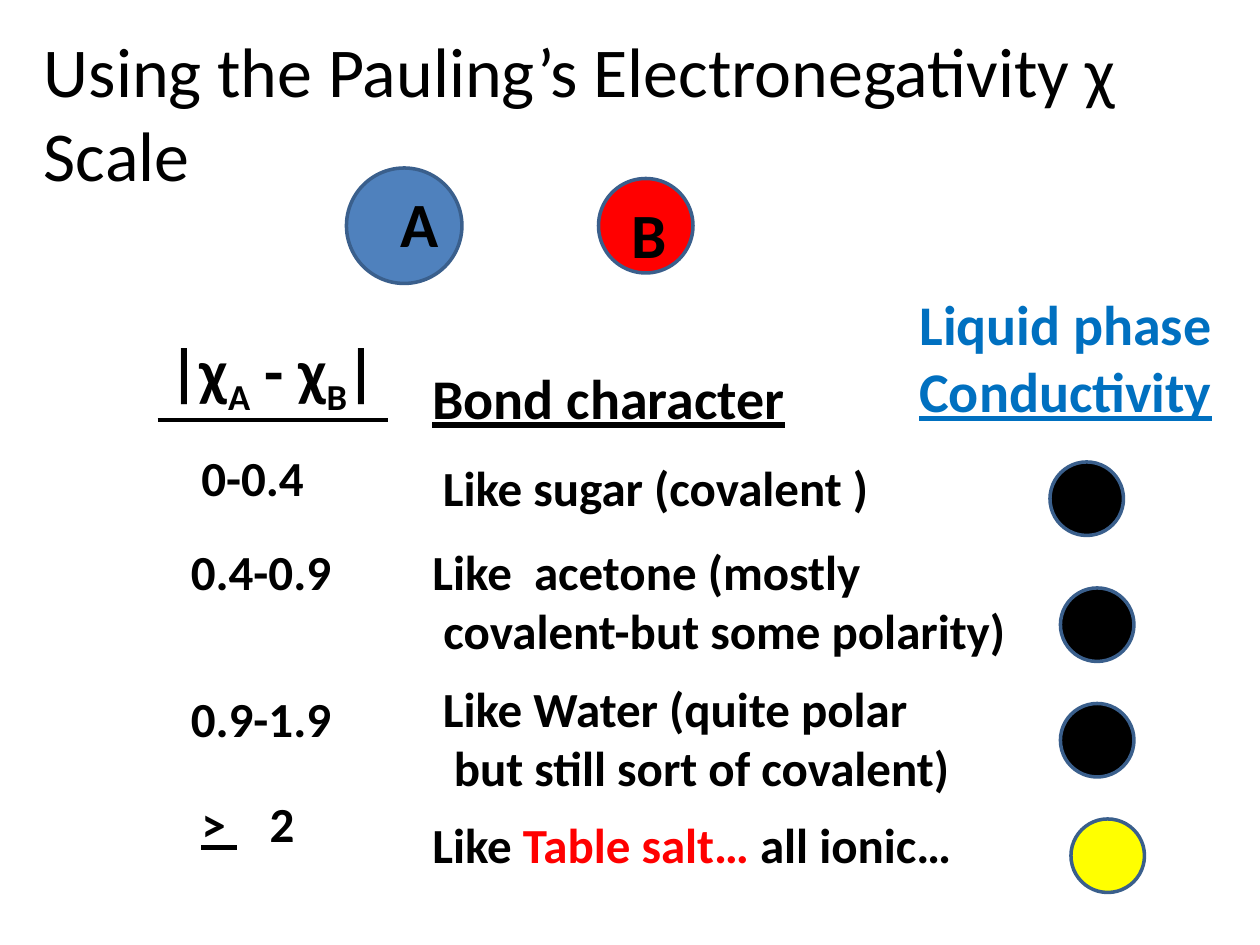
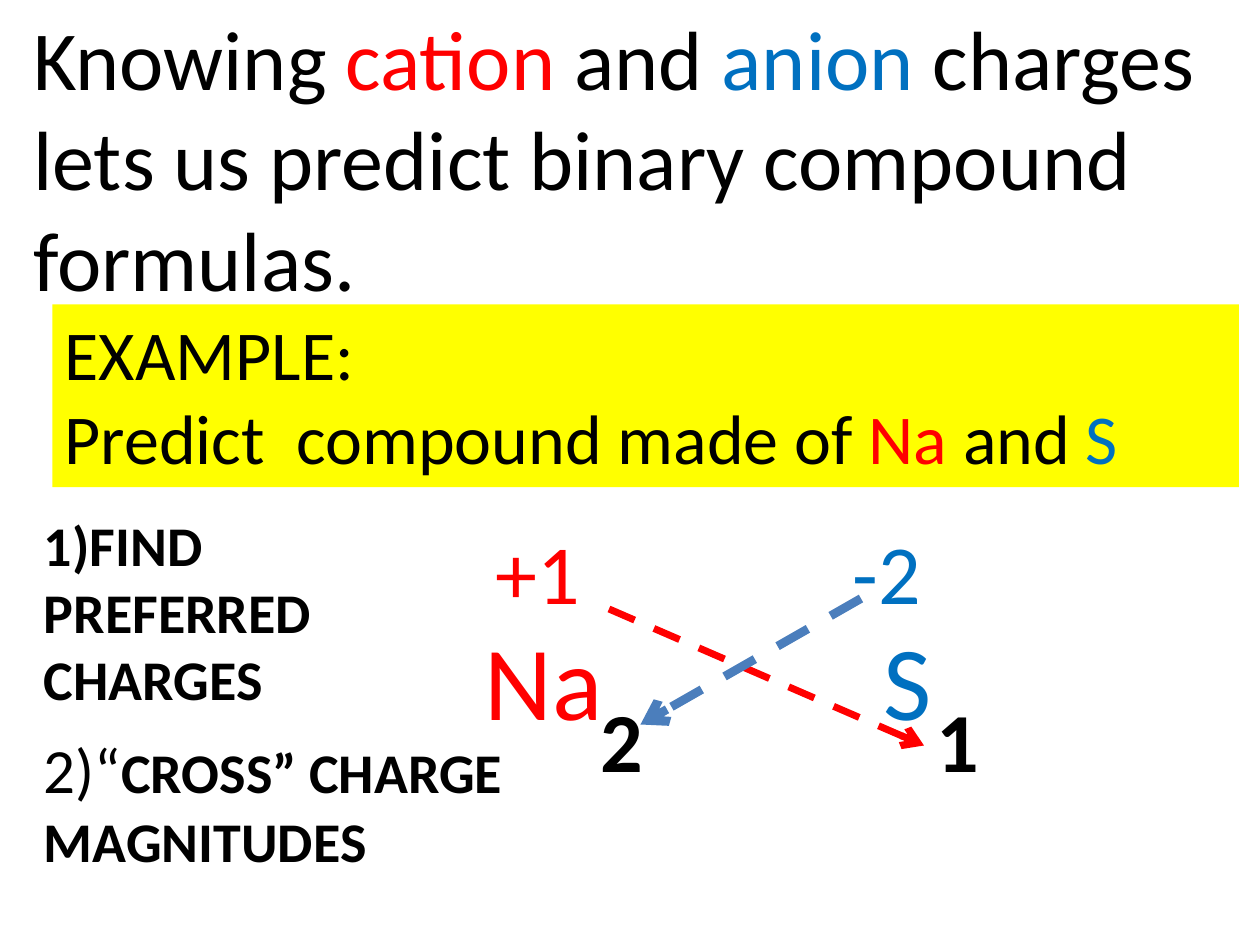
from lxml.etree import SubElement
from pptx import Presentation
from pptx.dml.color import RGBColor
from pptx.enum.dml import MSO_LINE
from pptx.enum.shapes import MSO_CONNECTOR, MSO_SHAPE
from pptx.enum.text import MSO_AUTO_SIZE, PP_ALIGN
from pptx.oxml.ns import qn
from pptx.util import Pt

FONT = "Calibri"
BLACK = RGBColor(0x00, 0x00, 0x00)
RED = RGBColor(0xFF, 0x00, 0x00)
YELLOW = RGBColor(0xFF, 0xFF, 0x00)
BLUE = RGBColor(0x00, 0x70, 0xC0)
ATOM_BLUE = RGBColor(0x4F, 0x81, 0xBD)
OUTLINE = RGBColor(0x3A, 0x5F, 0x8C)
ARROW_BLUE = RGBColor(0x4B, 0x7E, 0xBC)


def add_text(slide, box, paragraphs, size, color=BLACK, bold=False):
    """Each paragraph is a list of runs: a string, or (string, style changes)."""
    textbox = slide.shapes.add_textbox(*map(Pt, box))
    frame = textbox.text_frame
    frame.word_wrap = True
    frame.auto_size = MSO_AUTO_SIZE.SHAPE_TO_FIT_TEXT
    for index, runs in enumerate(paragraphs):
        paragraph = frame.add_paragraph() if index else frame.paragraphs[0]
        for part in runs:
            words, style = (part, {}) if isinstance(part, str) else part
            run = paragraph.add_run()
            run.text = words
            run.font.name = FONT
            run.font.size = Pt(style.get("size", size))
            run.font.bold = style.get("bold", bold)
            run.font.underline = style.get("underline", False)
            run.font.color.rgb = style.get("color", color)
            if "baseline" in style:
                run._r.get_or_add_rPr().set("baseline", style["baseline"])
    return textbox


def add_line(slide, start, end, color, width):
    line = slide.shapes.add_connector(MSO_CONNECTOR.STRAIGHT, *map(Pt, start + end))
    line.line.color.rgb = color
    line.line.width = Pt(width)
    SubElement(line._element.spPr, qn("a:effectLst"))
    return line


deck = Presentation()
deck.slide_width, deck.slide_height = Pt(720), Pt(540)
blank = deck.slide_layouts[6]
red, blue = {"color": RED}, {"color": BLUE}
underlined = {"underline": True}
subscript = {"baseline": "-25000"}

# Slide 1: electronegativity scale
scale = deck.slides.add_slide(blank)
add_text(scale, (18, 12, 654, 104.4),
         [["Using the Pauling’s Electronegativity χ Scale"]], 40)

# Atoms A and B, then one conductivity lamp per bond character
circles = [
    (198, 96, 66, ATOM_BLUE),
    (342, 102, 54, RED),
    (600, 264, 42, BLACK),
    (606, 336, 42, BLACK),
    (606, 402, 42, BLACK),
    (612, 468, 42, YELLOW),
]
for left, top, diameter, fill in circles:
    circle = scale.shapes.add_shape(
        MSO_SHAPE.OVAL, Pt(left), Pt(top), Pt(diameter), Pt(diameter))
    circle.shadow.inherit = False
    circle.fill.solid()
    circle.fill.fore_color.rgb = fill
    circle.line.color.rgb = OUTLINE
    circle.line.width = Pt(2)
add_text(scale, (222, 102, 18, 51), [["A"]], 36, bold=True)
add_text(scale, (354, 108, 30, 51), [["B"]], 36, bold=True)

# Column headings
add_text(scale, (90, 186, 192, 51),
         [["|χ", ("A", subscript), " - χ", ("B", subscript), "|"]], 36, bold=True)
add_line(scale, (90, 240), (222, 240), BLACK, 2.75)
add_text(scale, (240, 204, 228, 46), [[("Bond character", underlined)]], 32, bold=True)
conductivity = add_text(scale, (504, 162, 210, 85),
                        [["Liquid phase ", ("Conductivity", underlined)]],
                        32, BLUE, bold=True)
conductivity.text_frame.paragraphs[0].alignment = PP_ALIGN.CENTER

# Electronegativity differences
differences = [
    (108, 252, ["0-0.4"]),
    (102, 306, ["0.4-0.9"]),
    (102, 390, ["0.9-1.9"]),
    (108, 450, [("> ", underlined), "\t2"]),
]
for left, top, runs in differences:
    difference = add_text(scale, (left, top, 108, 41), [runs], 28, bold=True)
# The last one sets its number apart from the sign with a tab stop
tabs = SubElement(difference.text_frame.paragraphs[0]._p.get_or_add_pPr(), qn("a:tabLst"))
SubElement(tabs, qn("a:tab"), pos=str(Pt(39)), algn="l")

# Bond characters
characters = [
    (246, 258, 402, [["Like sugar (covalent )"]]),
    (240, 306, 384, [["Like  acetone (mostly"], [" covalent-but some polarity)"]]),
    (246, 384, 342, [["Like Water (quite polar"], [" but still sort of covalent)"]]),
    (240, 462, 402, [["Like ", ("Table salt… ", red), "all ionic…"]]),
]
for left, top, width, lines in characters:
    add_text(scale, (left, top, width, 7 + 34 * len(lines)), lines, 28, bold=True)

# Slide 2: crossing the charges
formulas = deck.slides.add_slide(blank)
add_text(formulas, (12, 0, 720, 181.5),
         [["Knowing ", ("cation", red), " and ", ("anion", blue),
           " charges lets us predict binary compound formulas."]], 48)
example = add_text(formulas, (30, 174, 678, 104.4),
                   [["EXAMPLE:"],
                    ["Predict  compound made of ", ("Na", red), " and ", ("S", blue)]], 40)
example.fill.solid()
example.fill.fore_color.rgb = YELLOW

# Steps
add_text(formulas, (18, 288, 192, 124), [["1)FIND PREFERRED CHARGES"]], 32, bold=True)
add_text(formulas, (18, 414, 294, 90),
         [[("2)“", {"size": 36, "bold": False}), "CROSS” CHARGE MAGNITUDES"]],
         32, bold=True)

# Ions, their charges and the resulting subscripts
symbols = [
    ("Na", 270, 348, 90, 60, RED, False),
    ("S", 498, 348, 84, 60, BLUE, False),
    ("+1", 276, 294, 72, 48, RED, False),
    ("-2", 480, 294, 72, 48, BLUE, False),
    ("1", 528, 390, 42, 48, BLACK, True),
    ("2", 336, 390, 36, 48, BLACK, True),
]
for symbol, left, top, width, size, color, bold in symbols:
    add_text(formulas, (left, top, width, size * 1.22 + 7), [[symbol]], size, color, bold)

# Crossing arrows from each charge to the other ion's subscript
crossings = [
    ((348, 348), (528, 426), RED, 4),
    ((492, 342), (366, 414), ARROW_BLUE, 5),
]
for start, end, color, width in crossings:
    arrow = add_line(formulas, start, end, color, width)
    arrow.line.dash_style = MSO_LINE.DASH
    SubElement(arrow.line._get_or_add_ln(), qn("a:tailEnd"), type="arrow")

deck.save("out.pptx")
